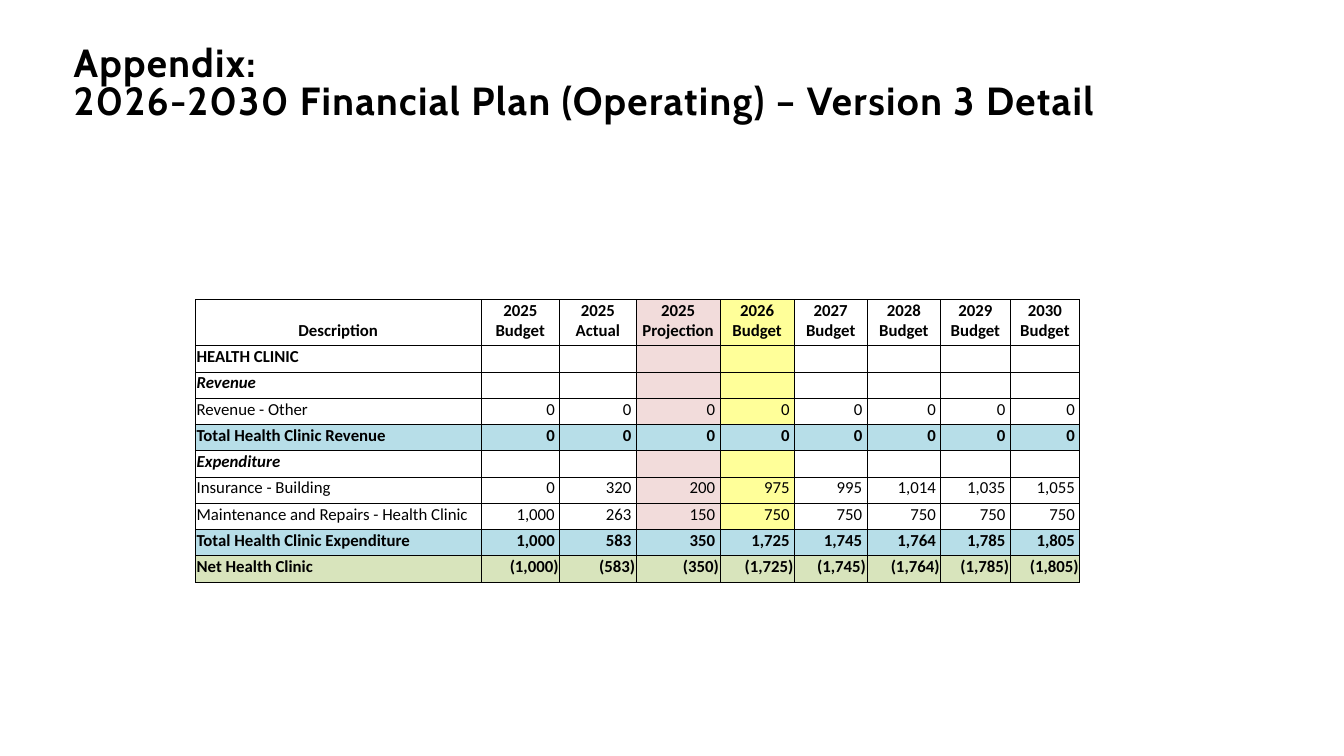
import pptx
import pptx.util
import pptx.dml.color
import pptx.enum.text
import pptx.oxml.ns
import lxml.etree

Inches, Pt = pptx.util.Inches, pptx.util.Pt
RGB = pptx.dml.color.RGBColor
ALIGN = pptx.enum.text.PP_ALIGN
ANCHOR = pptx.enum.text.MSO_ANCHOR
qn = pptx.oxml.ns.qn

BLACK = RGB(0, 0, 0)
PINK = RGB(0xF2, 0xDC, 0xDB)
YELLOW = RGB(0xFF, 0xFF, 0x99)
BLUE = RGB(0xB7, 0xDE, 0xE8)
GREEN = RGB(0xD8, 0xE4, 0xBC)

# Content: row kind, label, values
TITLE = "Appendix:\v2026-2030 Financial Plan (Operating) – Version 3 Detail"
HEADS = ["2025 Budget", "2025 Actual", "2025 Projection", "2026 Budget",
         "2027 Budget", "2028 Budget", "2029 Budget", "2030 Budget"]
ROWS = [
    ("head", "Description", HEADS),
    ("section", "HEALTH CLINIC", []),
    ("group", "Revenue", []),
    ("item", "Revenue - Other", [0] * 8),
    ("total", "Total Health Clinic Revenue", [0] * 8),
    ("group", "Expenditure", []),
    ("item", "Insurance - Building",
     [0, 320, 200, 975, 995, 1014, 1035, 1055]),
    ("item", "Maintenance and Repairs - Health Clinic",
     [1000, 263, 150, 750, 750, 750, 750, 750]),
    ("total", "Total Health Clinic Expenditure",
     [1000, 583, 350, 1725, 1745, 1764, 1785, 1805]),
    ("net", "Net Health Clinic",
     [-1000, -583, -350, -1725, -1745, -1764, -1785, -1805]),
]

# Format rules
WIDTHS = [2.83, 0.78, 0.76, 0.83, 0.74, 0.72, 0.73, 0.69, 0.69]
HEAD_H, ROW_H = 0.4, 0.21
ROW_FILL = {"total": BLUE, "net": GREEN}
COL_FILL = {3: PINK, 4: YELLOW}
THIN, THICK = 0.5, 1
CELL = {"margin_left": Inches(0.01), "margin_top": Inches(0.01),
        "margin_right": Inches(0.01), "margin_bottom": Inches(0.05),
        "vertical_anchor": ANCHOR.BOTTOM}
BOX = {"margin_left": 0, "margin_top": 0, "margin_right": 0,
       "margin_bottom": 0, "vertical_anchor": ANCHOR.BOTTOM,
       "word_wrap": True}


def apply(thing, style):
    for name, value in style.items():
        setattr(thing, name, value)


def write(para, text, face, size, bold, slant=False):
    para.text = text
    for run in para.runs:
        apply(run.font, {"name": face, "size": Pt(size),
                         "bold": bold, "italic": slant})
        run.font.color.rgb = BLACK


def show(value):
    if isinstance(value, str):
        return value
    return f"({-value:,})" if value < 0 else f"{value:,} "


def edge(cell, widths):
    props = cell._tc.get_or_add_tcPr()
    for spot, (side, width) in enumerate(zip("LRTB", widths)):
        line = lxml.etree.Element(qn("a:ln" + side), w=str(Pt(width)))
        fill = lxml.etree.SubElement(line, qn("a:solidFill"))
        lxml.etree.SubElement(fill, qn("a:srgbClr"), val=str(BLACK))
        props.insert(spot, line)


deck = pptx.Presentation()
deck.slide_width, deck.slide_height = Inches(13.33), Inches(7.5)
slide = deck.slides.add_slide(deck.slide_layouts[6])

# Title
box = slide.shapes.add_textbox(Inches(0.73), Inches(-0.12),
                               Inches(11.57), Inches(1.34))
apply(box.text_frame, BOX)
para = box.text_frame.paragraphs[0]
para.line_spacing = 0.8
write(para, TITLE, "Cabin", 28, True)
for run in para.runs:
    run.font._element.set("spc", "100")

# Table grid
high = HEAD_H + ROW_H * (len(ROWS) - 1)
table = slide.shapes.add_table(
    len(ROWS), len(WIDTHS), Inches(1.94), Inches(2.97),
    Inches(sum(WIDTHS)), Inches(high)).table
apply(table, {"first_row": False, "horz_banding": False})
for col, width in zip(table.columns, WIDTHS):
    col.width = Inches(width)
for num, row in enumerate(table.rows):
    row.height = Inches(ROW_H if num else HEAD_H)

# Table cells
kinds = [row[0] for row in ROWS]
for r, (kind, label, values) in enumerate(ROWS):
    top = THICK if kind == "total" else THIN
    low = THICK if "total" in kinds[r + 1:r + 2] else THIN
    texts = [label] + [show(v) for v in values]
    for c in range(len(WIDTHS)):
        cell = table.cell(r, c)
        apply(cell, CELL)
        para = cell.text_frame.paragraphs[0]
        if c < len(texts):
            write(para, texts[c], "Calibri", 12,
                  kind != "item", kind == "group")
            para.alignment = (ALIGN.CENTER if kind == "head" else
                              ALIGN.RIGHT if c else ALIGN.LEFT)
        else:
            lxml.etree.SubElement(para._p, qn("a:endParaRPr"), sz="1200")
        color = ROW_FILL.get(kind, COL_FILL.get(c))
        if color is None:
            cell.fill.background()
        else:
            cell.fill.solid()
            cell.fill.fore_color.rgb = color
        edge(cell, (THIN, THIN, top, low))

deck.save("out.pptx")
